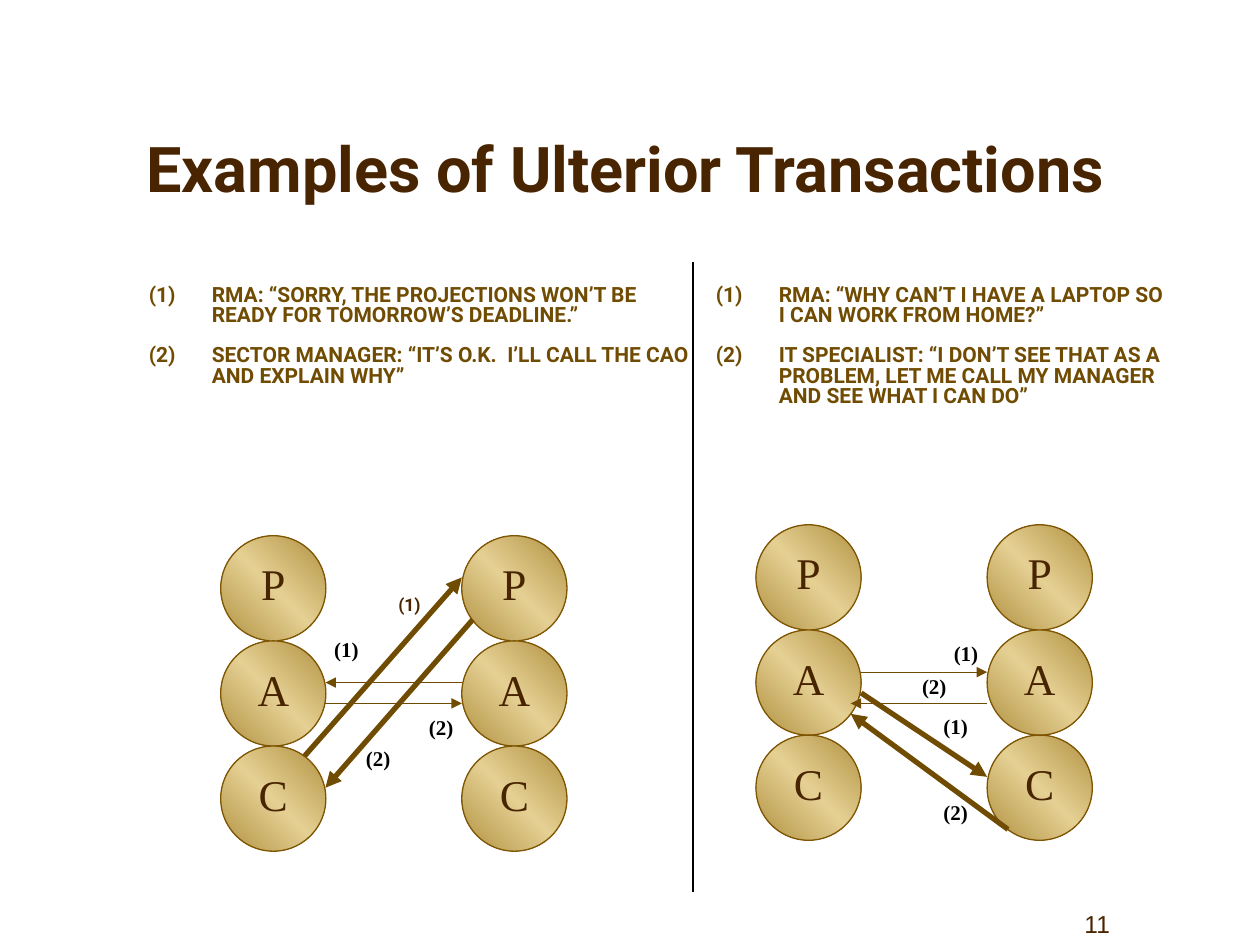
import copy
import lxml.etree
import pptx
import pptx.dml.color
import pptx.enum.shapes
import pptx.enum.text
import pptx.oxml.ns
import pptx.util

Cm = pptx.util.Cm
Pt = pptx.util.Pt
ALIGN = pptx.enum.text.PP_ALIGN
ANCHOR = pptx.enum.text.MSO_ANCHOR


def colour(hex_string):
    return pptx.dml.color.RGBColor.from_string(hex_string)


class TransactionSlide:
    heading_font = "Roboto"
    letter_font = "Times New Roman"
    dark = "482400"
    brown = "704B02"
    black = "000000"
    outline = "7E5502"
    gold = ("B09040", "E5D093", "B09040")
    diameter = 2.12

    def __init__(self, deck):
        self.page = deck.slides.add_slide(deck.slide_layouts[6])

    def style(self, paragraph, font, size, hex_string, bold=False):
        paragraph.font.name = font
        paragraph.font.size = Pt(size)
        paragraph.font.bold = bold
        paragraph.font.color.rgb = colour(hex_string)

    def text(self, place, words, font, size, hex_string, bold=True, anchor=ANCHOR.TOP):
        box = self.page.shapes.add_textbox(*map(Cm, place))
        frame = box.text_frame
        frame.word_wrap = True
        frame.vertical_anchor = anchor
        paragraph = frame.paragraphs[0]
        paragraph.text = words
        paragraph.alignment = ALIGN.CENTER
        self.style(paragraph, font, size, hex_string, bold)
        return frame

    def title(self, words):
        frame = self.text((1.9, 2.8, 21.6, 2.28), words, self.heading_font, 36,
                          self.dark, anchor=ANCHOR.BOTTOM)
        frame.margin_bottom = Cm(0.95)
        frame.margin_right = Cm(0.43)

    def label(self, left, top, number, font=letter_font, size=12, hex_string=black):
        self.text((left, top, 1.27, 0.77), f"({number})", font, size, hex_string)

    def dialogue(self, place, lines):
        box = self.page.shapes.add_textbox(*map(Cm, place))
        frame = box.text_frame
        frame.word_wrap = True
        for number, words in enumerate(lines, 1):
            paragraph = frame.paragraphs[0] if number == 1 else frame.add_paragraph()
            paragraph.text = words
            properties = paragraph._p.get_or_add_pPr()
            properties.set("marL", str(Cm(1.27)))
            properties.set("indent", str(-Cm(1.27)))
            lxml.etree.SubElement(properties, pptx.oxml.ns.qn("a:buAutoNum"),
                                  type="arabicParenBoth", startAt=str(number))
            paragraph.line_spacing = 0.8
            if number > 1:
                paragraph.space_before = Pt(11.5)
            self.style(paragraph, self.heading_font, 12, self.brown, True)

    def circle(self, left, top, letter):
        shape = self.page.shapes.add_shape(
            pptx.enum.shapes.MSO_SHAPE.OVAL,
            Cm(left), Cm(top), Cm(self.diameter), Cm(self.diameter))
        shape.shadow.inherit = False
        shape.fill.gradient()
        shape.fill.gradient_angle = 45
        stops = shape._element.spPr.find(".//" + pptx.oxml.ns.qn("a:gsLst"))
        stops.insert(1, copy.deepcopy(stops[0]))
        for index, stop in enumerate(shape.fill.gradient_stops):
            stop.position = index / 2
            stop.color.rgb = colour(self.gold[index])
        shape.line.color.rgb = colour(self.outline)
        shape.line.width = Pt(0.75)
        frame = shape.text_frame
        frame.vertical_anchor = ANCHOR.MIDDLE
        paragraph = frame.paragraphs[0]
        paragraph.text = letter
        paragraph.alignment = ALIGN.CENTER
        paragraph.line_spacing = 0.8
        self.style(paragraph, self.letter_font, 25, self.dark)

    def ego_states(self, lefts, top):
        for left in lefts:
            for row, letter in enumerate("PAC"):
                self.circle(left, top + row * self.diameter, letter)

    def line(self, ends, width=0.75, hex_string=brown, arrow=True):
        connector = self.page.shapes.add_connector(
            pptx.enum.shapes.MSO_CONNECTOR.STRAIGHT, *map(Cm, ends))
        connector.line.color.rgb = colour(hex_string)
        connector.line.width = Pt(width)
        if arrow:
            lxml.etree.SubElement(connector.line._get_or_add_ln(),
                                  pptx.oxml.ns.qn("a:tailEnd"), type="triangle")
        lxml.etree.SubElement(connector._element.spPr, pptx.oxml.ns.qn("a:effectLst"))


def main():
    deck = pptx.Presentation()
    deck.slide_width = Cm(25.4)
    deck.slide_height = Cm(19.05)
    slide = TransactionSlide(deck)

    slide.text((19.48, 17.78, 5.28, 1.27), "11", "Arial", 14, slide.dark,
               bold=False, anchor=ANCHOR.BOTTOM)
    slide.title("Examples of Ulterior Transactions")
    slide.ego_states((4.45, 9.31), 10.8)
    slide.ego_states((15.24, 19.9), 10.58)
    slide.line((13.97, 5.29, 13.97, 17.99), hex_string=slide.black, arrow=False)

    slide.dialogue((2.75, 5.65, 11.43, 2.31), (
        "RMA: “SORRY, THE PROJECTIONS WON’T BE READY FOR TOMORROW’S DEADLINE.”",
        "SECTOR MANAGER: “IT’S O.K.  I’LL CALL THE CAO AND EXPLAIN WHY”",
    ))
    slide.dialogue((14.18, 5.65, 9.74, 2.72), (
        "RMA: “WHY CAN’T I HAVE A LAPTOP SO I CAN WORK FROM HOME?”",
        "IT SPECIALIST: “I DON’T SEE THAT AS A PROBLEM, LET ME CALL MY MANAGER "
        "AND SEE WHAT I CAN DO”",
    ))

    for ends in (
        (6.56, 14.18, 9.31, 14.18),
        (9.31, 13.76, 6.56, 13.76),
        (17.36, 13.55, 19.9, 13.55),
        (19.9, 14.18, 17.15, 14.18),
    ):
        slide.line(ends)
    for ends in (
        (6.14, 15.24, 9.31, 11.64),
        (9.53, 12.49, 6.56, 15.88),
        (17.36, 13.97, 19.9, 15.66),
        (20.32, 16.72, 17.15, 14.39),
    ):
        slide.line(ends, width=3)

    slide.label(7.62, 11.85, 1, slide.heading_font, 10, slide.dark)
    for left, top, number in (
        (6.35, 12.7, 1),
        (8.26, 14.27, 2),
        (6.99, 14.9, 2),
        (18.84, 12.78, 1),
        (18.2, 13.45, 2),
        (18.63, 14.25, 1),
        (18.63, 16, 2),
    ):
        slide.label(left, top, number)

    deck.save("out.pptx")


if __name__ == "__main__":
    main()
